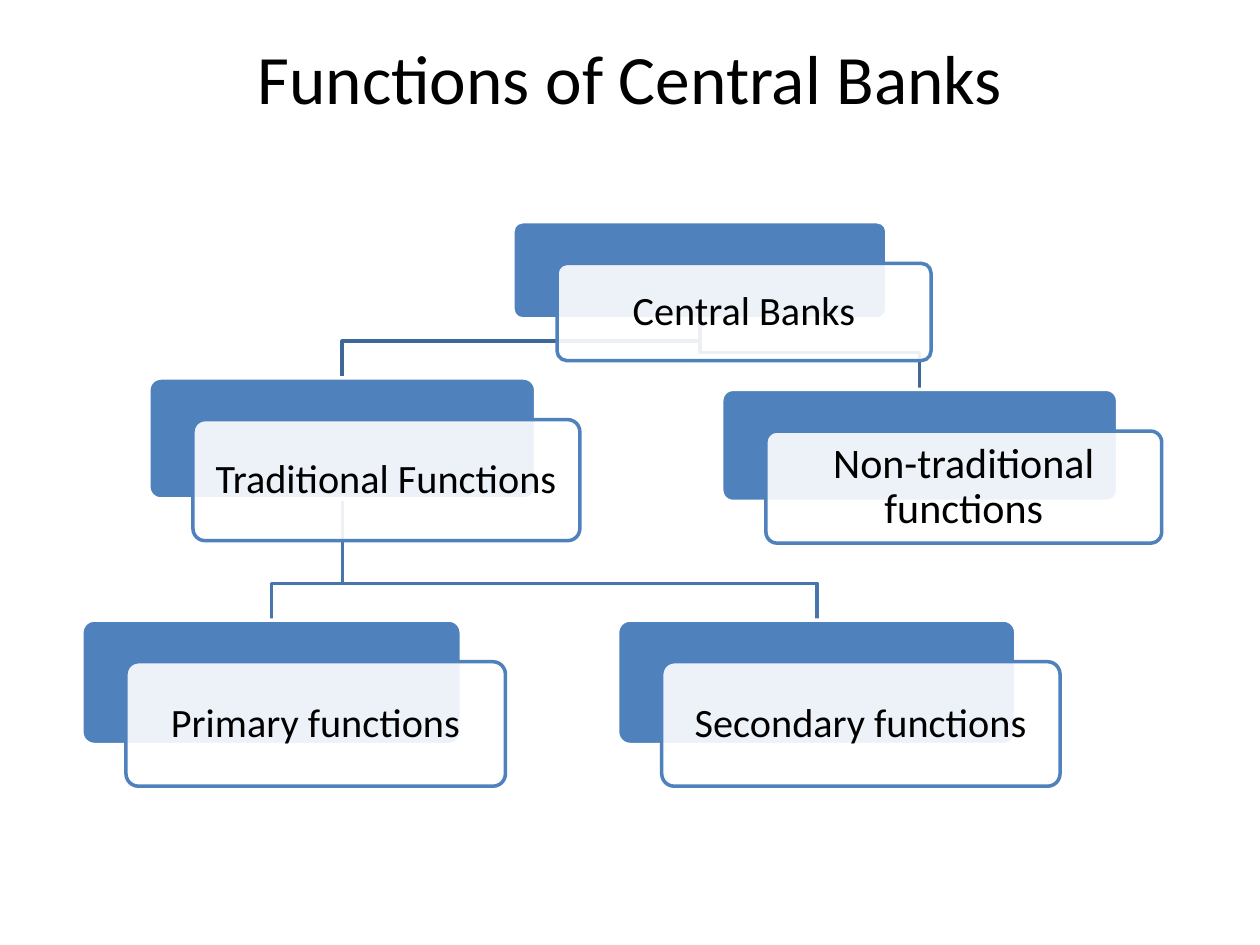
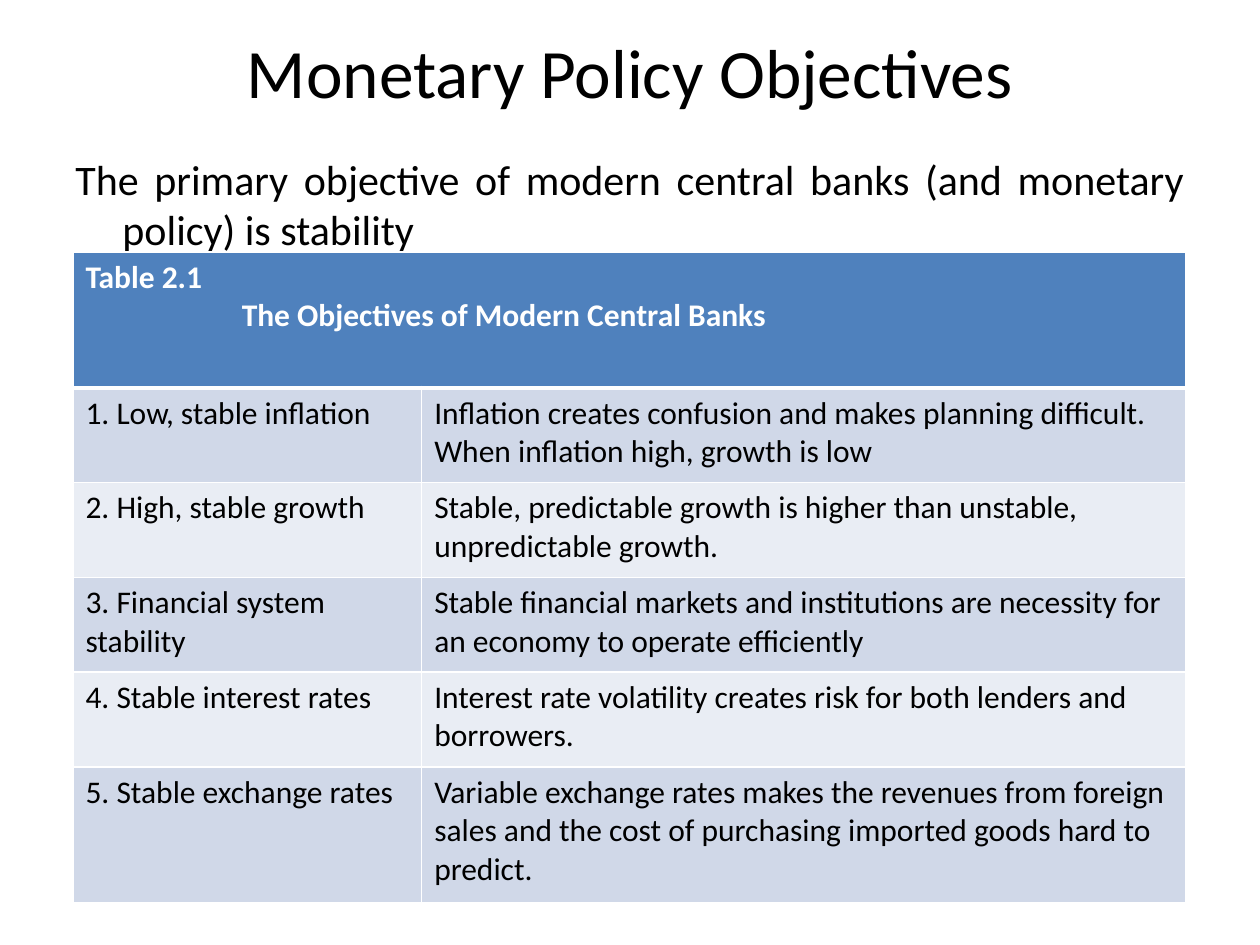
"""Build two slides on central bank functions and monetary policy objectives."""
from dataclasses import dataclass
from itertools import product

from lxml.etree import SubElement
from pptx import Presentation
from pptx.dml.color import RGBColor as Rgb
from pptx.enum.shapes import MSO_SHAPE as Shape
from pptx.enum.text import MSO_ANCHOR as Anchor, PP_ALIGN as Align
from pptx.oxml.ns import qn
from pptx.util import Cm, Pt


@dataclass(frozen=True)
class Theme:
    """Colours and type sizes shared by the slides."""
    font: str = "Calibri"
    ink: str = "000000"
    paper: str = "FFFFFF"
    accent: str = "4F81BD"
    upper_link: str = "3F6797"
    lower_link: str = "4875AC"
    odd_row: str = "D0D8E8"
    even_row: str = "E9EDF4"
    title_size: float = 39.6
    body_size: float = 24
    node_size: float = 23
    table_size: float = 18
    line: float = 2


@dataclass(frozen=True)
class Node:
    """One chart box: label, back-card geometry in centimetres, text size."""
    label: str
    left: float
    top: float
    width: float
    height: float
    size: float = Theme.node_size

    @property
    def centre(self):
        """Return the horizontal centre of the back card."""
        return self.left + self.width / 2


THEME = Theme()
CARD_SHIFT = (0.89, 0.84)
BEND_ABOVE_CHILD = 0.74

BANKS = Node("Central Banks", 10.34, 4.47, 7.54, 1.96)
TRADITIONAL = Node("Traditional Functions", 3, 7.62, 7.8, 2.44)
NON_TRADITIONAL = Node("Non-traditional functions", 14.55, 7.85, 7.98, 2.26, 24)
PRIMARY = Node("Primary functions", 1.65, 12.5, 7.65, 2.51)
SECONDARY = Node("Secondary functions", 12.45, 12.5, 8.03, 2.51)
NODES = (BANKS, TRADITIONAL, PRIMARY, SECONDARY, NON_TRADITIONAL)
LINKS = (
    (BANKS, NON_TRADITIONAL, THEME.upper_link),
    (TRADITIONAL, SECONDARY, THEME.lower_link),
    (TRADITIONAL, PRIMARY, THEME.lower_link),
    (BANKS, TRADITIONAL, THEME.upper_link),
)

OBJECTIVES = (
    ("1. Low, stable inflation",
     "Inflation creates confusion and makes planning difficult. When inflation high, growth is low"),
    ("2. High, stable growth",
     "Stable, predictable growth is higher than unstable, unpredictable growth."),
    ("3. Financial system stability",
     "Stable financial markets and institutions are necessity for an economy to operate efficiently"),
    ("4. Stable interest rates",
     "Interest rate volatility creates risk for both lenders and borrowers."),
    ("5. Stable exchange rates",
     "Variable exchange rates makes the revenues from foreign sales and the cost of "
     "purchasing imported goods hard to predict."),
)
COLUMN_WIDTHS = (7.03, 15.41)
ROW_HEIGHTS = (2.74, 1.91, 1.91, 1.91, 1.91, 2.74)


def write(para, text, size, colour=THEME.ink, align=Align.LEFT, bold=False):
    """Put styled text into a paragraph."""
    para.text = text
    para.alignment = align
    para.font.name = THEME.font
    para.font.size = Pt(size)
    para.font.bold = bold
    para.font.color.rgb = Rgb.from_string(colour)


def indent(para, margin, first_line=0):
    """Set the left margin and first-line indent of a paragraph."""
    properties = para._p.get_or_add_pPr()
    properties.set("marL", str(Cm(margin)))
    properties.set("indent", str(Cm(first_line)))


def add_text(page, text, bounds, size, align, anchor):
    """Add a wrapping text box and return its paragraph."""
    frame = page.shapes.add_textbox(*map(Cm, bounds)).text_frame
    frame.word_wrap = True
    frame.vertical_anchor = anchor
    para = frame.paragraphs[0]
    write(para, text, size, align=align)
    return para


def add_page(deck, title, title_height):
    """Add a blank page with a centred title."""
    page = deck.slides.add_slide(deck.slide_layouts[6])
    bounds = (1.27, 0.76, 22.86, title_height)
    add_text(page, title, bounds, THEME.title_size, Align.CENTER, Anchor.MIDDLE)
    return page


def add_link(page, parent, child, colour):
    """Draw a stepped line from a parent box down to a child box."""
    bend = child.top - BEND_ABOVE_CHILD
    points = [(parent.centre, parent.top + parent.height), (parent.centre, bend),
              (child.centre, bend), (child.centre, child.top)]
    start, *rest = [(Cm(x), Cm(y)) for x, y in points]
    builder = page.shapes.build_freeform(*start)
    builder.add_line_segments(rest, close=False)
    link = builder.convert_to_shape()
    link.shadow.inherit = False
    link.fill.background()
    link.line.color.rgb = Rgb.from_string(colour)
    link.line.width = Pt(THEME.line)


def add_card(page, bounds, fill, outline):
    """Add a rounded card."""
    card = page.shapes.add_shape(Shape.ROUNDED_RECTANGLE, *map(Cm, bounds))
    card.adjustments[0] = 0.1
    card.shadow.inherit = False
    card.fill.solid()
    card.fill.fore_color.rgb = Rgb.from_string(fill)
    card.line.color.rgb = Rgb.from_string(outline)
    card.line.width = Pt(THEME.line)
    return card


def add_node(page, node):
    """Add a solid back card and a translucent labelled front card."""
    size = (node.width, node.height)
    add_card(page, (node.left, node.top, *size), THEME.accent, THEME.paper)
    shift_x, shift_y = CARD_SHIFT
    front = add_card(page, (node.left + shift_x, node.top + shift_y, *size),
                     THEME.paper, THEME.accent)
    colour = front._element.spPr.find(f"{qn('a:solidFill')}/{qn('a:srgbClr')}")
    SubElement(colour, qn("a:alpha"), val="90000")
    frame = front.text_frame
    frame.word_wrap = True
    frame.vertical_anchor = Anchor.MIDDLE
    frame.margin_left = frame.margin_right = Cm(0.25)
    frame.margin_top = frame.margin_bottom = Cm(0.25)
    para = frame.paragraphs[0]
    write(para, node.label, node.size, align=Align.CENTER)
    para.line_spacing = 0.9


def style_cell(cell, fill, **widths):
    """Give a cell white borders, 1 pt unless widths says otherwise, and a fill."""
    properties = cell._tc.get_or_add_tcPr()
    for side in "LRTB":
        border = SubElement(properties, qn(f"a:ln{side}"), w=str(Pt(widths.get(side, 1))))
        solid = SubElement(border, qn("a:solidFill"))
        SubElement(solid, qn("a:srgbClr"), val=THEME.paper)
    cell.fill.solid()
    cell.fill.fore_color.rgb = Rgb.from_string(fill)


def add_objectives_table(page):
    """Add the table of objectives below a merged heading row."""
    table = page.shapes.add_table(
        len(ROW_HEIGHTS), len(COLUMN_WIDTHS), Cm(1.47), Cm(5.08),
        Cm(sum(COLUMN_WIDTHS)), Cm(sum(ROW_HEIGHTS))).table
    for column, width in zip(table.columns, COLUMN_WIDTHS):
        column.width = Cm(width)
    for row, height in zip(table.rows, ROW_HEIGHTS):
        row.height = Cm(height)

    heading = table.cell(0, 0)
    heading.merge(table.cell(0, 1))
    for cell in table.rows[0].cells:
        style_cell(cell, THEME.accent, B=3)
    frame = heading.text_frame
    number, caption = frame.paragraphs[0], frame.add_paragraph()
    write(number, "Table 2.1", THEME.table_size, THEME.paper, bold=True)
    write(caption, "The Objectives of Modern Central Banks",
          THEME.table_size, THEME.paper, bold=True)
    indent(caption, 3.15)

    for row, column in product(range(len(OBJECTIVES)), range(len(COLUMN_WIDTHS))):
        cell = table.cell(row + 1, column)
        style_cell(cell, THEME.even_row if row % 2 else THEME.odd_row,
                   T=1 if row else 3)
        write(cell.text_frame.paragraphs[0], OBJECTIVES[row][column], THEME.table_size)


def build_functions_page(deck):
    """Build the hierarchy of central bank functions."""
    page = add_page(deck, "Functions of Central Banks", 1.57)
    for parent, child, colour in LINKS:
        add_link(page, parent, child, colour)
    for node in NODES:
        add_node(page, node)


def build_objectives_page(deck):
    """Build the page of monetary policy objectives."""
    page = add_page(deck, "Monetary Policy Objectives", 1.35)
    statement = add_text(
        page, "The primary objective of modern central banks (and monetary policy) is stability",
        (1.27, 2.97, 22.86, 2.1), THEME.body_size, Align.JUSTIFY, Anchor.TOP)
    indent(statement, 0.95, -0.95)
    add_objectives_table(page)


def main():
    """Create and save the deck."""
    deck = Presentation()
    deck.slide_width, deck.slide_height = Cm(25.4), Cm(19.05)
    build_functions_page(deck)
    build_objectives_page(deck)
    deck.save("out.pptx")


if __name__ == "__main__":
    main()
